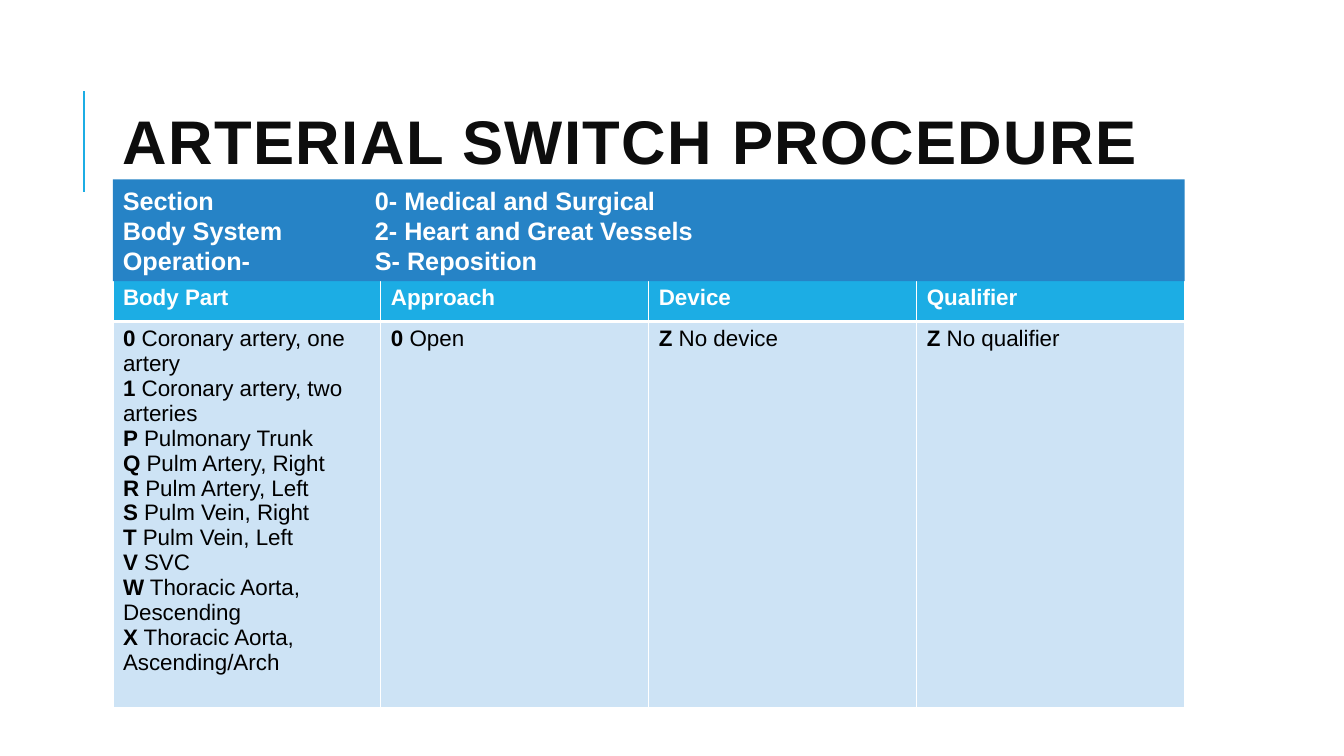
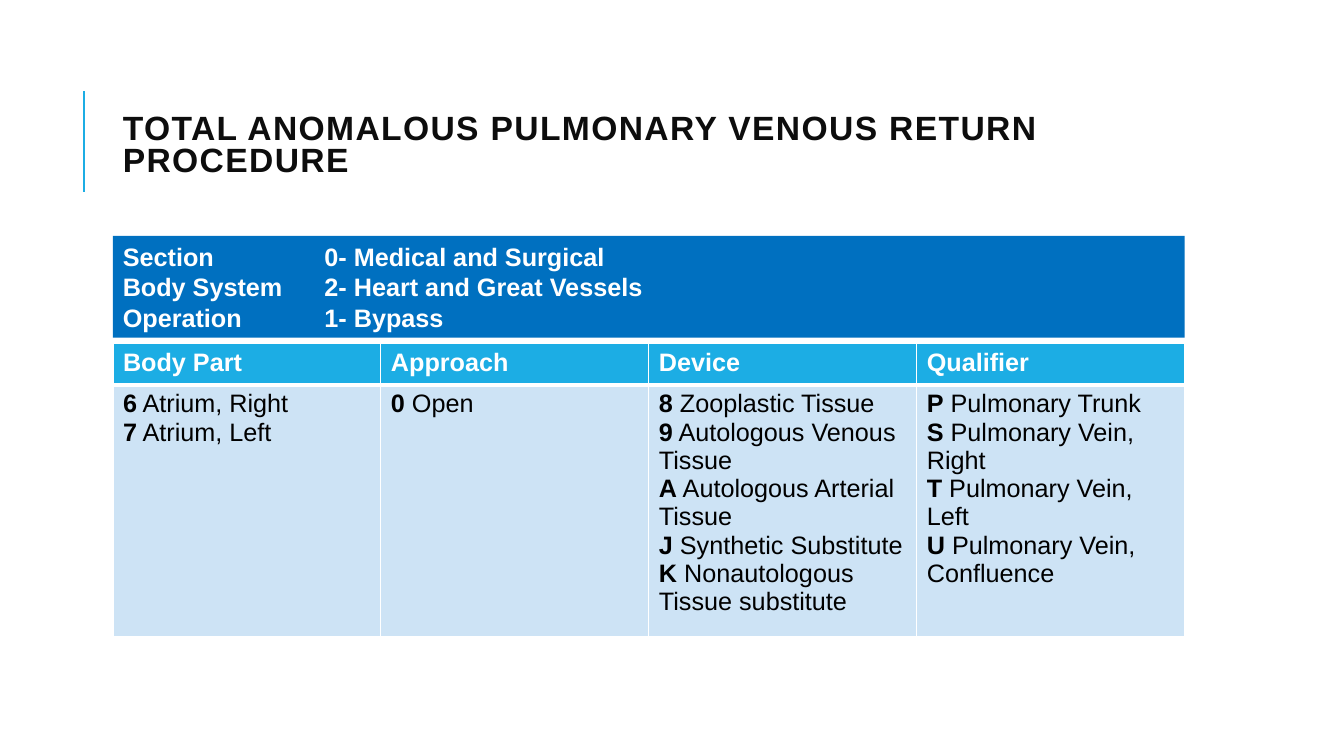
from dataclasses import dataclass

from lxml import etree
from pptx import Presentation
from pptx.dml.color import RGBColor
from pptx.enum.shapes import MSO_CONNECTOR, MSO_SHAPE
from pptx.enum.text import MSO_ANCHOR, PP_ALIGN
from pptx.oxml.ns import qn
from pptx.util import Inches, Pt


@dataclass(frozen=True)
class Theme:
    font: str = "Arial"
    title: str = "0D0D0D"
    accent: str = "1CADE4"
    body_fill: str = "CDE3F5"
    body_text: str = "000000"
    white: str = "FFFFFF"
    section_size: int = 18
    left: float = 1.12
    width: float = 10.63
    header_height: float = 0.41


THEME = Theme()
HEADINGS = ["Body Part", "Approach", "Device", "Qualifier"]

# Each code is a (character, meaning) pair
ARTERIAL_SWITCH = dict(
    title="ARTERIAL SWITCH PROCEDURE", title_size=44,
    section=[("Section", "0- Medical and Surgical"),
             ("Body System", "2- Heart and Great Vessels"),
             ("Operation-", "S- Reposition")],
    section_top=1.78, section_fill="2683C6", section_tab=2.5,
    table_top=2.78, body_height=3.55, code_size=16,
    codes=[
        [("0", "Coronary artery, one artery"),
         ("1", "Coronary artery, two arteries"),
         ("P", "Pulmonary Trunk"),
         ("Q", "Pulm Artery, Right"),
         ("R", "Pulm Artery, Left"),
         ("S", "Pulm Vein, Right"),
         ("T", "Pulm Vein, Left"),
         ("V", "SVC"),
         ("W", "Thoracic Aorta, Descending"),
         ("X", "Thoracic Aorta, Ascending/Arch")],
        [("0", "Open")],
        [("Z", "No device")],
        [("Z", "No qualifier")],
    ],
)

VENOUS_RETURN = dict(
    title="TOTAL ANOMALOUS PULMONARY VENOUS RETURN PROCEDURE", title_size=24,
    section=[("Section", "0- Medical and Surgical"),
             ("Body System", "2- Heart and Great Vessels"),
             ("Operation", "1- Bypass")],
    section_top=2.34, section_fill="0070C0", section_tab=2,
    table_top=3.41, body_height=2.33, code_size=18,
    codes=[
        [("6", "Atrium, Right"), ("7", "Atrium, Left")],
        [("0", "Open")],
        [("8", "Zooplastic Tissue"),
         ("9", "Autologous Venous Tissue"),
         ("A", "Autologous Arterial Tissue"),
         ("J", "Synthetic Substitute"),
         ("K", "Nonautologous Tissue substitute")],
        [("P", "Pulmonary Trunk"),
         ("S", "Pulmonary Vein, Right"),
         ("T", "Pulmonary Vein, Left"),
         ("U", "Pulmonary Vein, Confluence")],
    ],
)


def color(value):
    return RGBColor.from_string(value)


def style_run(run, size, value, bold=True):
    run.font.name = THEME.font
    run.font.size = Pt(size)
    run.font.bold = bold
    run.font.color.rgb = color(value)


def add_accent_line(slide):
    x = Inches(0.83)
    accent = slide.shapes.add_connector(
        MSO_CONNECTOR.STRAIGHT, x, Inches(1.9), x, Inches(0.9))
    accent.line.color.rgb = color(THEME.accent)
    accent.line.width = Pt(1.5)
    etree.SubElement(accent._element.spPr, qn("a:effectLst"))


def add_title(slide, text, size):
    title = slide.shapes.add_textbox(
        Inches(THEME.left), Inches(0.64), Inches(THEME.width), Inches(1.64))
    frame = title.text_frame
    frame.word_wrap = True
    frame.vertical_anchor = MSO_ANCHOR.MIDDLE
    frame.text = text
    paragraph = frame.paragraphs[0]
    paragraph.line_spacing = 0.8
    run = paragraph.runs[0]
    style_run(run, size, THEME.title)
    run.font._element.set("spc", "100")


def add_section_band(slide, rows, top, fill, tab):
    band = slide.shapes.add_shape(
        MSO_SHAPE.RECTANGLE, Inches(THEME.left), Inches(top),
        Inches(THEME.width), Inches(1.01))
    band.shadow.inherit = False
    band.fill.solid()
    band.fill.fore_color.rgb = color(fill)
    band.line.fill.background()
    frame = band.text_frame
    frame.word_wrap = True
    frame.text = "\n".join(f"{label}\t{value}" for label, value in rows)
    for paragraph in frame.paragraphs:
        paragraph.alignment = PP_ALIGN.LEFT
        tabs = etree.SubElement(
            paragraph._p.get_or_add_pPr(), qn("a:tabLst"))
        etree.SubElement(tabs, qn("a:tab"), pos=str(Inches(tab)), algn="l")
        for run in paragraph.runs:
            style_run(run, THEME.section_size, THEME.white)


def style_cell(cell, fill, widths):
    """Set white borders, one width for each side, and the fill."""
    properties = cell._tc.get_or_add_tcPr()
    for side, width in widths.items():
        border = etree.SubElement(
            properties, qn(f"a:ln{side}"), w=str(Pt(width)))
        solid = etree.SubElement(border, qn("a:solidFill"))
        etree.SubElement(solid, qn("a:srgbClr"), val=THEME.white)
    cell.fill.solid()
    cell.fill.fore_color.rgb = color(fill)


def fill_codes(cell, codes, size):
    frame = cell.text_frame
    frame.text = "\n".join(code for code, _ in codes)
    for paragraph, (_, meaning) in zip(frame.paragraphs, codes):
        style_run(paragraph.runs[0], size, THEME.body_text)
        run = paragraph.add_run()
        run.text = f" {meaning}"
        style_run(run, size, THEME.body_text, bold=False)


def add_code_table(slide, columns, top, body_height, size):
    table = slide.shapes.add_table(
        2, len(HEADINGS), Inches(THEME.left), Inches(top),
        Inches(THEME.width), Inches(THEME.header_height + body_height)).table
    table.rows[0].height = Inches(THEME.header_height)
    table.rows[1].height = Inches(body_height)
    for index, (heading, codes) in enumerate(zip(HEADINGS, columns)):
        header, body = table.cell(0, index), table.cell(1, index)
        header.text_frame.text = heading
        style_run(header.text_frame.paragraphs[0].runs[0], size, THEME.white)
        style_cell(header, THEME.accent, dict(L=1, R=1, T=1, B=3))
        fill_codes(body, codes, size)
        style_cell(body, THEME.body_fill, dict(L=1, R=1, T=3, B=1))


def add_procedure_slide(deck, procedure):
    slide = deck.slides.add_slide(deck.slide_layouts[6])
    add_accent_line(slide)
    add_title(slide, procedure["title"], procedure["title_size"])
    add_code_table(slide, procedure["codes"], procedure["table_top"],
                   procedure["body_height"], procedure["code_size"])
    add_section_band(slide, procedure["section"], procedure["section_top"],
                     procedure["section_fill"], procedure["section_tab"])


def main():
    deck = Presentation()
    deck.slide_width = Inches(13.33)
    deck.slide_height = Inches(7.5)
    for procedure in (ARTERIAL_SWITCH, VENOUS_RETURN):
        add_procedure_slide(deck, procedure)
    deck.save("out.pptx")


if __name__ == "__main__":
    main()
